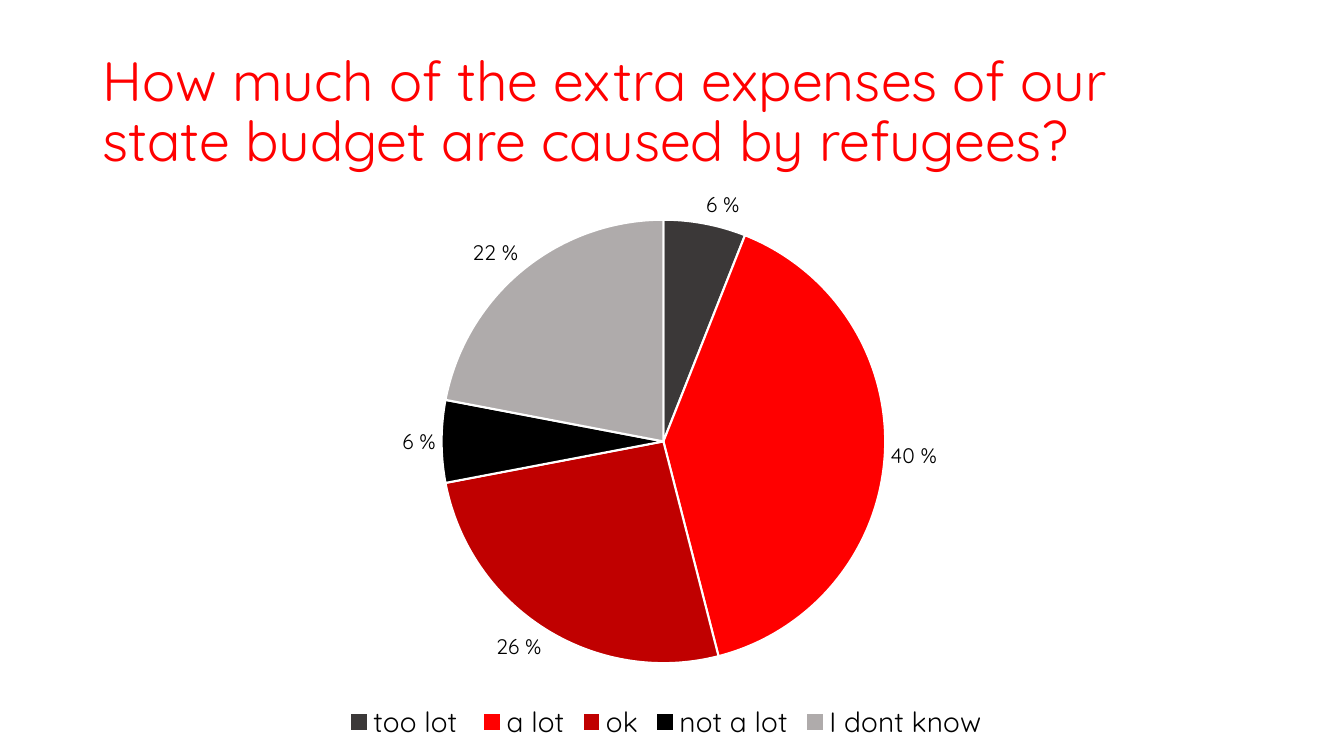
from lxml import etree
from pptx import Presentation
from pptx.chart.data import CategoryChartData
from pptx.dml.color import RGBColor
from pptx.enum.chart import XL_CHART_TYPE, XL_LABEL_POSITION, XL_LEGEND_POSITION
from pptx.enum.text import MSO_ANCHOR
from pptx.oxml.ns import qn
from pptx.util import Inches, Pt

FONT = "Quicksand"
RED = "FF0000"
BLACK = "000000"
WHITE = "FFFFFF"

# Answer, share in percent, slice colour
ANSWERS = [
    ("too lot ", 6, "3B3838"),
    ("a lot", 40, RED),
    ("ok", 26, "C00000"),
    ("not a lot", 6, BLACK),
    ("I dont know ", 22, "AFABAB"),
]

CHART_LEFT, CHART_TOP, CHART_WIDTH, CHART_HEIGHT = 0.19, 1.73, 12.91, 5.67
PIE_LEFT, PIE_TOP, PIE_DIAMETER = 4.38, 2.18, 4.4


def color(hex_code):
    return RGBColor.from_string(hex_code)


def style_font(font, size, hex_code):
    font.name = FONT
    font.size = Pt(size)
    font.color.rgb = color(hex_code)


def add_title(slide, text):
    shape = slide.shapes.add_textbox(Inches(0.92), Inches(0.4), Inches(11.5), Inches(1.45))
    frame = shape.text_frame
    frame.word_wrap = True
    frame.vertical_anchor = MSO_ANCHOR.MIDDLE
    paragraph = frame.paragraphs[0]
    paragraph.line_spacing = 0.9
    run = paragraph.add_run()
    run.text = text
    style_font(run.font, 39.6, RED)


def place_pie(chart):
    """Fix the pie's square inside the chart frame, as fractions of the frame."""
    plot_area = chart.plots[0]._element.getparent()
    for old_layout in plot_area.findall(qn("c:layout")):
        plot_area.remove(old_layout)
    layout = etree.Element(qn("c:layout"))
    plot_area.insert(0, layout)
    manual = etree.SubElement(layout, qn("c:manualLayout"))
    settings = {
        "layoutTarget": "inner",
        "xMode": "edge",
        "yMode": "edge",
        "x": (PIE_LEFT - CHART_LEFT) / CHART_WIDTH,
        "y": (PIE_TOP - CHART_TOP) / CHART_HEIGHT,
        "w": PIE_DIAMETER / CHART_WIDTH,
        "h": PIE_DIAMETER / CHART_HEIGHT,
    }
    for name, value in settings.items():
        etree.SubElement(manual, qn(f"c:{name}")).set("val", str(value))


def add_pie(slide, answers):
    data = CategoryChartData(number_format='0" %"')
    data.categories = [answer for answer, _, _ in answers]
    data.add_series("Series 1", [share for _, share, _ in answers])
    chart = slide.shapes.add_chart(
        XL_CHART_TYPE.PIE, Inches(CHART_LEFT), Inches(CHART_TOP),
        Inches(CHART_WIDTH), Inches(CHART_HEIGHT), data).chart
    chart.has_title = False
    style_font(chart.font, 15, BLACK)

    # Slices
    plot = chart.plots[0]
    plot.vary_by_categories = True
    for index, (_, _, slice_color) in enumerate(answers):
        slice_format = plot.series[0].points[index].format
        slice_format.fill.solid()
        slice_format.fill.fore_color.rgb = color(slice_color)
        slice_format.line.color.rgb = color(WHITE)
        slice_format.line.width = Pt(1.5)

    # Value labels
    plot.has_data_labels = True
    labels = plot.data_labels
    labels.show_value = True
    labels.show_percentage = False
    labels.number_format = '0" %"'
    labels.number_format_is_linked = False
    labels.position = XL_LABEL_POSITION.OUTSIDE_END
    style_font(labels.font, 15, BLACK)

    # Legend
    chart.has_legend = True
    chart.legend.position = XL_LEGEND_POSITION.BOTTOM
    chart.legend.include_in_layout = False
    style_font(chart.legend.font, 20, BLACK)

    place_pie(chart)


def main():
    presentation = Presentation()
    presentation.slide_width = Inches(13.33)
    presentation.slide_height = Inches(7.5)
    slide = presentation.slides.add_slide(presentation.slide_layouts[6])
    add_title(slide, "How much of the extra expenses of our state budget are caused by refugees?")
    add_pie(slide, ANSWERS)
    presentation.save("out.pptx")


if __name__ == "__main__":
    main()
